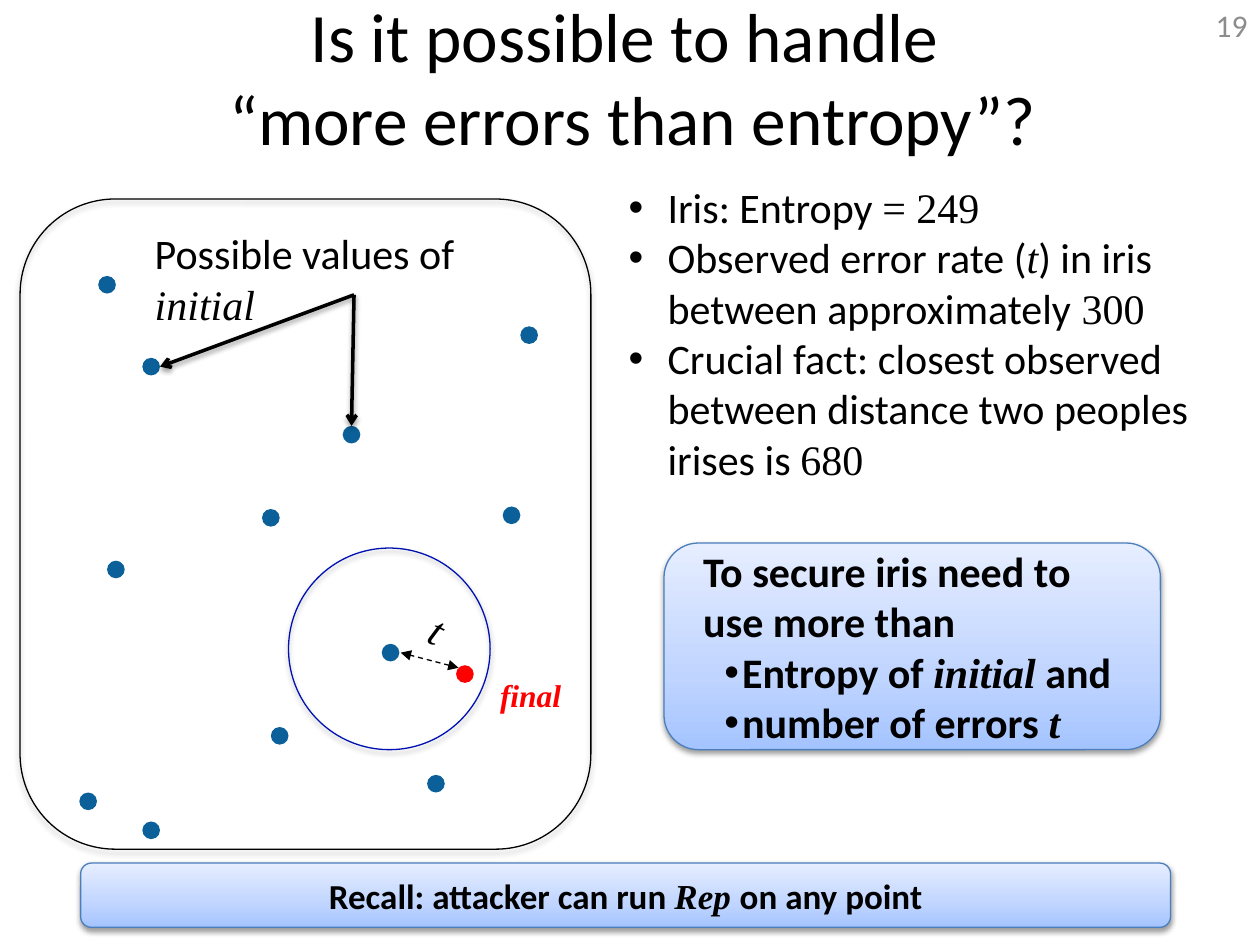
from copy import deepcopy
from typing import NamedTuple, Optional

from lxml import etree
from pptx import Presentation
from pptx.dml.color import RGBColor
from pptx.enum import dml, shapes, text
from pptx.oxml.ns import qn
from pptx.util import Inches, Pt

SANS, SERIF = "Calibri", "Times New Roman"
BLACK, RED, BLUE = "000000", "FF0000", "0B609A"
DOT = 0.14
MID, TOP = text.MSO_ANCHOR.MIDDLE, text.MSO_ANCHOR.TOP
LEFT, CENTER, RIGHT = text.PP_ALIGN.LEFT, text.PP_ALIGN.CENTER, text.PP_ALIGN.RIGHT


class Area(NamedTuple):
    x: float
    y: float
    w: float
    h: float


class Point(NamedTuple):
    x: float
    y: float


class Bit(NamedTuple):
    words: str
    font: str = SANS
    italic: bool = False


class Para(NamedTuple):
    bits: list[Bit]
    hang: Optional[float] = None  # bullet indent; None means no bullet
    level: int = 0


class Style(NamedTuple):
    size: float = 24
    color: str = BLACK
    bold: bool = False
    align: text.PP_ALIGN = LEFT
    anchor: text.MSO_ANCHOR = TOP
    wrap: bool = True


class Shade(NamedTuple):
    alpha: int
    dist: float


SOFT, FIRM = Shade(35, 1.8), Shade(38, 1.6)


def rgb(code: str) -> RGBColor:
    return RGBColor.from_string(code)


def var(words: str) -> Bit:
    return Bit(words, SERIF, True)


def num(words: str) -> Bit:
    return Bit(words, SERIF)


def inches(area: Area) -> list[int]:
    return [Inches(v) for v in area]


def sub(node, tag: str, **attrs: str):
    return etree.SubElement(node, qn(tag), attrs)


def shade(props, look: Optional[Shade]) -> None:
    """Replace the effects of a shape or connector with one drop shadow, or none."""
    for old in props.findall(qn("a:effectLst")):
        props.remove(old)
    effects = sub(props, "a:effectLst")
    if look:
        drop = sub(effects, "a:outerShdw", blurRad=str(Pt(3.1)), dist=str(Pt(look.dist)),
                   dir="5400000", rotWithShape="0")
        tint = sub(drop, "a:srgbClr", val=BLACK)
        sub(tint, "a:alpha", val=str(look.alpha * 1000))


def write(frame, paras: list[Para], style: Style) -> None:
    frame.word_wrap = style.wrap
    frame.vertical_anchor = style.anchor
    for i, para in enumerate(paras):
        p = frame.add_paragraph() if i else frame.paragraphs[0]
        p.alignment, p.level = style.align, para.level
        if para.hang is not None:
            props = p._p.get_or_add_pPr()
            props.set("marL", str(Inches(0.31)))
            props.set("indent", str(-Inches(para.hang)))
            sub(props, "a:buFont", typeface="Arial")
            sub(props, "a:buChar", char="•")
        for bit in para.bits:
            for j, part in enumerate(bit.words.split("\n")):
                if j:
                    p.add_line_break()
                run = p.add_run()
                run.text = part
                font = run.font
                font.name, font.size, font.italic = bit.font, Pt(style.size), bit.italic
                font.bold, font.color.rgb = style.bold, rgb(style.color)


def label(slide, area: Area, paras: list[Para], style: Style, turn: float = 0) -> None:
    box = slide.shapes.add_textbox(*inches(area))
    box.rotation = turn
    write(box.text_frame, paras, style)


def dot(slide, spot: Point, color: str = BLUE) -> None:
    shape = slide.shapes.add_shape(shapes.MSO_SHAPE.OVAL, *inches(Area(*spot, DOT, DOT)))
    shape.shadow.inherit = False
    shape.fill.solid()
    shape.fill.fore_color.rgb = rgb(color)
    shape.line.fill.background()


def outline(slide, kind, area: Area, color: str) -> None:
    shape = slide.shapes.add_shape(kind, *inches(area))
    shape.fill.background()
    shape.line.color.rgb, shape.line.width = rgb(color), Pt(0.75)
    shade(shape._element.spPr, SOFT)


def panel(slide, area: Area, paras: list[Para], style: Style, inset: float) -> None:
    """Rounded box with a blue gradient, lightest at the top."""
    shape = slide.shapes.add_shape(shapes.MSO_SHAPE.ROUNDED_RECTANGLE, *inches(area))
    shape.fill.gradient()
    shape.fill.gradient_angle = 90
    stops = shape._element.spPr.find(qn("a:gradFill")).find(qn("a:gsLst"))
    stops.append(deepcopy(stops[0]))
    tints = [(0, "A4C4FF"), (0.35, "BFD4FF"), (1, "E6EEFF")]
    for stop, (place, color) in zip(shape.fill.gradient_stops, tints):
        stop.position, stop.color.rgb = place, rgb(color)
    shape.line.color.rgb, shape.line.width = rgb("4B7EBC"), Pt(0.75)
    shade(shape._element.spPr, FIRM)
    frame = shape.text_frame
    frame.margin_left = Inches(inset)
    frame.margin_top = frame.margin_right = frame.margin_bottom = Inches(0.05)
    write(frame, paras, style)


def arrow(slide, start: Point, end: Point, width: float, tail: str, head: str = "none",
          dash: bool = False, look: Optional[Shade] = None) -> None:
    link = slide.shapes.add_connector(shapes.MSO_CONNECTOR.STRAIGHT,
                                      *(Inches(v) for v in (*start, *end)))
    link.line.color.rgb, link.line.width = rgb(BLACK), Pt(width)
    if dash:
        link.line.dash_style = dml.MSO_LINE.DASH
    props = link._element.spPr
    stroke = props.find(qn("a:ln"))
    sub(stroke, "a:headEnd", type=head)
    sub(stroke, "a:tailEnd", type=tail)
    shade(props, look)


def main() -> None:
    deck = Presentation()
    deck.slide_width, deck.slide_height = Inches(10), Inches(7.5)
    slide = deck.slides.add_slide(deck.slide_layouts[6])

    label(slide, Area(0.16, -0.02, 9.72, 1.25),
          [Para([Bit("Is it possible to handle \n“more errors than entropy”?")])],
          Style(39.6, align=CENTER, anchor=MID))

    values = [(2.15, 5.77), (1.13, 2.84), (1.13, 6.52), (3.39, 6.15), (4.13, 2.59),
              (2.72, 3.38), (3.99, 4.02), (0.85, 4.45), (0.63, 6.29), (3.03, 5.11),
              (0.78, 2.19), (2.08, 4.04)]
    for spot in values:
        dot(slide, Point(*spot))
    for end in (Point(2.79, 3.38), Point(1.27, 2.91)):
        arrow(slide, Point(2.81, 2.34), end, 2, "arrow", look=FIRM)
    label(slide, Area(1.13, 1.76, 3.17, 0.91),
          [Para([Bit("Possible values of "), var("initial")])], Style())

    facts = [
        [Bit("Iris: Entropy "), num("= 249")],
        [Bit("Observed error rate ("), var("t"),
         Bit(") in iris between approximately"), num(" 300")],
        [Bit("Crucial fact: closest observed between distance two peoples irises is "),
         num("680")],
    ]
    label(slide, Area(4.89, 1.39, 5, 2.52), [Para(fact, 0.31) for fact in facts], Style())

    label(slide, Area(3.87, 5.32, 0.78, 0.4), [Para([var("final")])],
          Style(18, RED, bold=True, wrap=False))
    dot(slide, Point(3.62, 5.28), RED)
    arrow(slide, Point(3.64, 5.3), Point(3.18, 5.18), 0.75, "triangle", "triangle", dash=True)
    label(slide, Area(7.67, 0, 2.33, 0.4), [Para([Bit("19")])],
          Style(18, "8C8C8C", align=RIGHT, anchor=MID))
    outline(slide, shapes.MSO_SHAPE.OVAL, Area(2.29, 4.35, 1.6, 1.6), "0011B2")
    label(slide, Area(3.25, 4.73, 0.4, 0.5), [Para([num(" "), var("t")])],
          Style(wrap=False), turn=26.9)
    outline(slide, shapes.MSO_SHAPE.ROUNDED_RECTANGLE, Area(0.16, 1.58, 4.53, 5.16), BLACK)

    panel(slide, Area(5.27, 4.31, 3.94, 1.64),
          [Para([Bit("To secure iris need to \nuse more than")]),
           Para([Bit("Entropy of "), var("initial"), Bit(" and")], 0.14, 1),
           Para([Bit("number of errors "), var("t")], 0.14, 1)],
          Style(bold=True, anchor=MID), 0.23)
    panel(slide, Area(0.64, 6.85, 8.65, 0.51),
          [Para([Bit("Recall: attacker can run "), var("Rep "), Bit("on any point")])],
          Style(20, bold=True, align=CENTER, anchor=MID), 0.05)

    deck.save("out.pptx")


if __name__ == "__main__":
    main()
